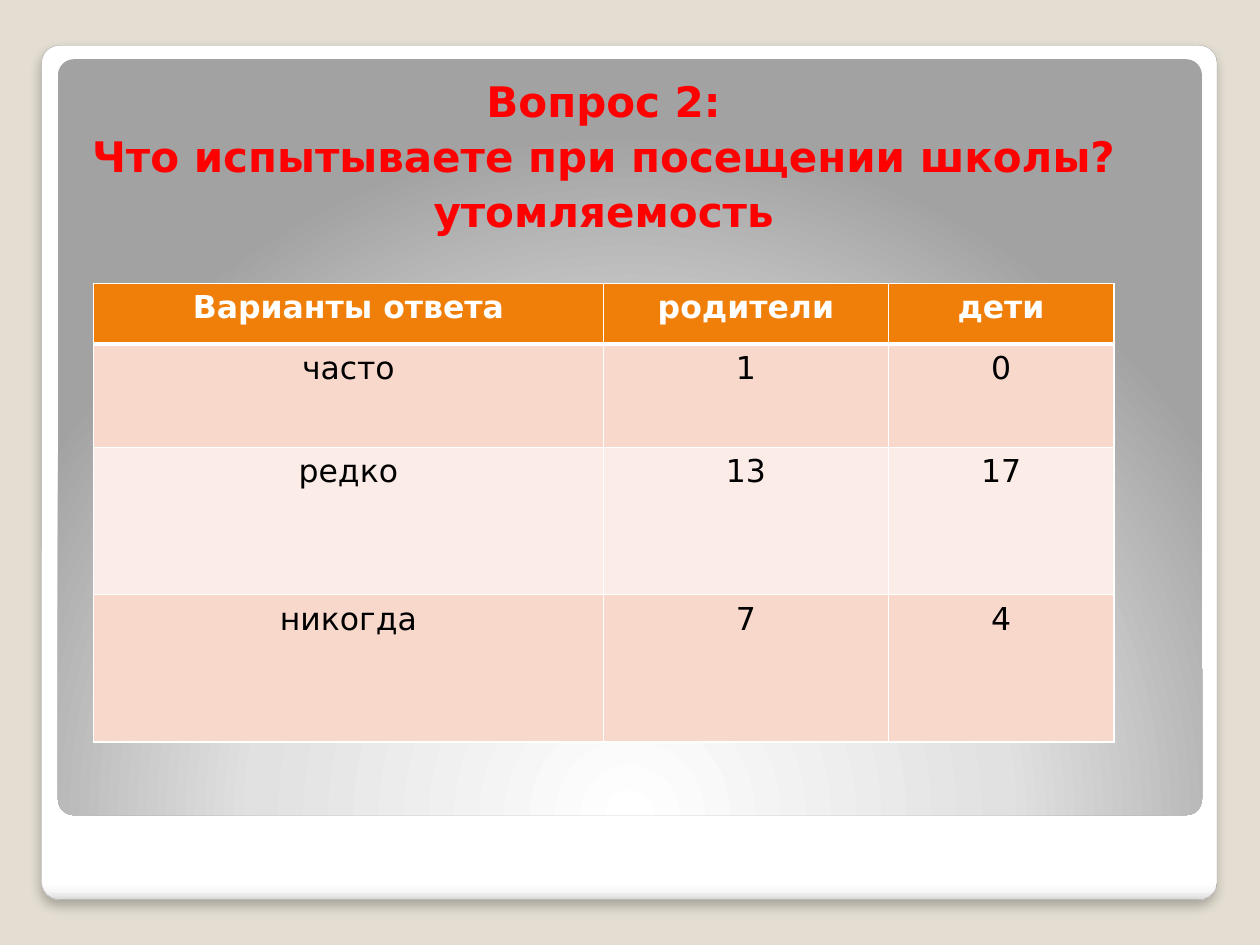
from lxml import etree
from pptx import Presentation
from pptx.dml.color import RGBColor
from pptx.enum.shapes import MSO_SHAPE
from pptx.enum.text import PP_ALIGN
from pptx.oxml.ns import qn
from pptx.util import Inches, Pt

ROUND = MSO_SHAPE.ROUNDED_RECTANGLE
CENTER = PP_ALIGN.CENTER
FONT = "DejaVu Sans"
HUES = {
    "back": "E3DED1", "edge": "A4A4A4", "title": "FF0000",
    "head": "F07F09", "odd": "F9D8CC", "even": "FCECE7",
    "white": "FFFFFF", "black": "000000",
}
FRAME = [(0, "FFFFFF"), (98, "FFFFFF"), (99, "F7F7F7"), (100, "DADADA")]
GLOW = [(0, "FFFFFF"), (55, "E1E1E1"), (100, "A2A2A2")]
TITLE = ["Вопрос 2:", "Что испытываете при посещении школы?", "утомляемость"]
ROWS = [
    ["Варианты ответа", "родители", "дети"],
    ["часто", "1", "0"],
    ["редко", "13", "17"],
    ["никогда", "7", "4"],
]
WIDTHS = [4.05, 2.26, 1.79]
HEIGHTS = [0.48, 0.82, 1.17, 1.17]


def hue(name):
    """Return the named colour."""
    return RGBColor.from_string(HUES[name])


def node(top, tag, **attrs):
    """Append an XML child with the given attributes."""
    return etree.SubElement(top, qn(tag), {k: str(v) for k, v in attrs.items()})


def tint(top, code):
    """Append an RGB colour to an XML parent."""
    return node(top, "a:srgbClr", val=code)


def style(par, size, name, bold):
    """Centre a paragraph and set its font."""
    par.alignment = CENTER
    font = par.font
    font.name, font.size, font.bold = FONT, Pt(size), bold
    font.color.rgb = hue(name)


def panel(slide, box, stops):
    """Draw a rounded panel with a gradient and return it with its fill."""
    shape = slide.shapes.add_shape(ROUND, *map(Inches, box))
    shape.adjustments[0] = 0.021
    shape.shadow.inherit = False
    shape.line.fill.background()
    grad = etree.Element(qn("a:gradFill"), rotWithShape="1")
    items = node(grad, "a:gsLst")
    for pos, code in stops:
        tint(node(items, "a:gs", pos=pos * 1000), code)
    shape.element.spPr.find(qn("a:prstGeom")).addnext(grad)
    return shape, grad


def frame(slide, box):
    """Draw the white frame with its soft shadow."""
    shape, grad = panel(slide, box, FRAME)
    node(grad, "a:lin", ang=5400000, scaled=0)
    shape.line.color.rgb = hue("edge")
    shape.line.width = Pt(0.16)
    effects = shape.element.spPr.find(qn("a:effectLst"))
    shade = node(effects, "a:outerShdw", blurRad=Pt(6), dist=Pt(4),
                 dir=5400000, algn="tl", rotWithShape=0)
    node(tint(shade, HUES["black"]), "a:alpha", val=25000)


def glow(slide, box):
    """Draw the grey panel lit from below."""
    grad = panel(slide, box, GLOW)[1]
    way = node(grad, "a:path", path="circle")
    node(way, "a:fillToRect", l=50000, t=175000, r=50000, b=-75000)


def title(slide, box):
    """Write the question, its first line set a little to the left."""
    text = slide.shapes.add_textbox(*map(Inches, box)).text_frame
    text.word_wrap = True
    text.margin_left, text.margin_top = Inches(0.2), Inches(0.1)
    text.margin_right, text.margin_bottom = Inches(0.1), Inches(0.05)
    text.text = "\n".join(TITLE)
    for par in text.paragraphs:
        style(par, 24, "title", True)
        par.space_before = Pt(2.5)
    text.paragraphs[0].runs[0].font.bold = True
    text.paragraphs[0]._p.get_or_add_pPr().set("marR", str(Inches(0.35)))


def border(cell, row):
    """Rule a cell in white, with a thick line under the header."""
    props = cell._tc.get_or_add_tcPr()
    thick = {("B", 0), ("T", 1)}
    for spot, side in enumerate("LRTB"):
        width = 3 if (side, row) in thick else 1
        line = etree.Element(qn(f"a:ln{side}"), w=str(Pt(width)))
        tint(node(line, "a:solidFill"), HUES["white"])
        props.insert(spot, line)


def answers(slide, box):
    """Lay out the table of answers."""
    size = len(ROWS), len(WIDTHS)
    table = slide.shapes.add_table(*size, *map(Inches, box)).table
    for col, width in zip(table.columns, WIDTHS):
        col.width = Inches(width)
    for r, words in enumerate(ROWS):
        table.rows[r].height = Inches(HEIGHTS[r])
        fill = "head" if r == 0 else "odd" if r % 2 else "even"
        for c, word in enumerate(words):
            cell = table.cell(r, c)
            cell.text = word
            cell.fill.solid()
            cell.fill.fore_color.rgb = hue(fill)
            style(cell.text_frame.paragraphs[0], 18,
                  "black" if r else "white", r == 0)
            border(cell, r)


def main():
    """Build the slide and save it."""
    deck = Presentation()
    deck.slide_width, deck.slide_height = Inches(10), Inches(7.5)
    slide = deck.slides.add_slide(deck.slide_layouts[6])
    slide.background.fill.solid()
    slide.background.fill.fore_color.rgb = hue("back")
    frame(slide, (0.33, 0.36, 9.33, 6.78))
    glow(slide, (0.46, 0.47, 9.08, 6))
    title(slide, (0.33, 0.5, 9.17, 6.42))
    answers(slide, (0.74, 2.25, sum(WIDTHS), sum(HEIGHTS)))
    deck.save("out.pptx")


if __name__ == "__main__":
    main()
